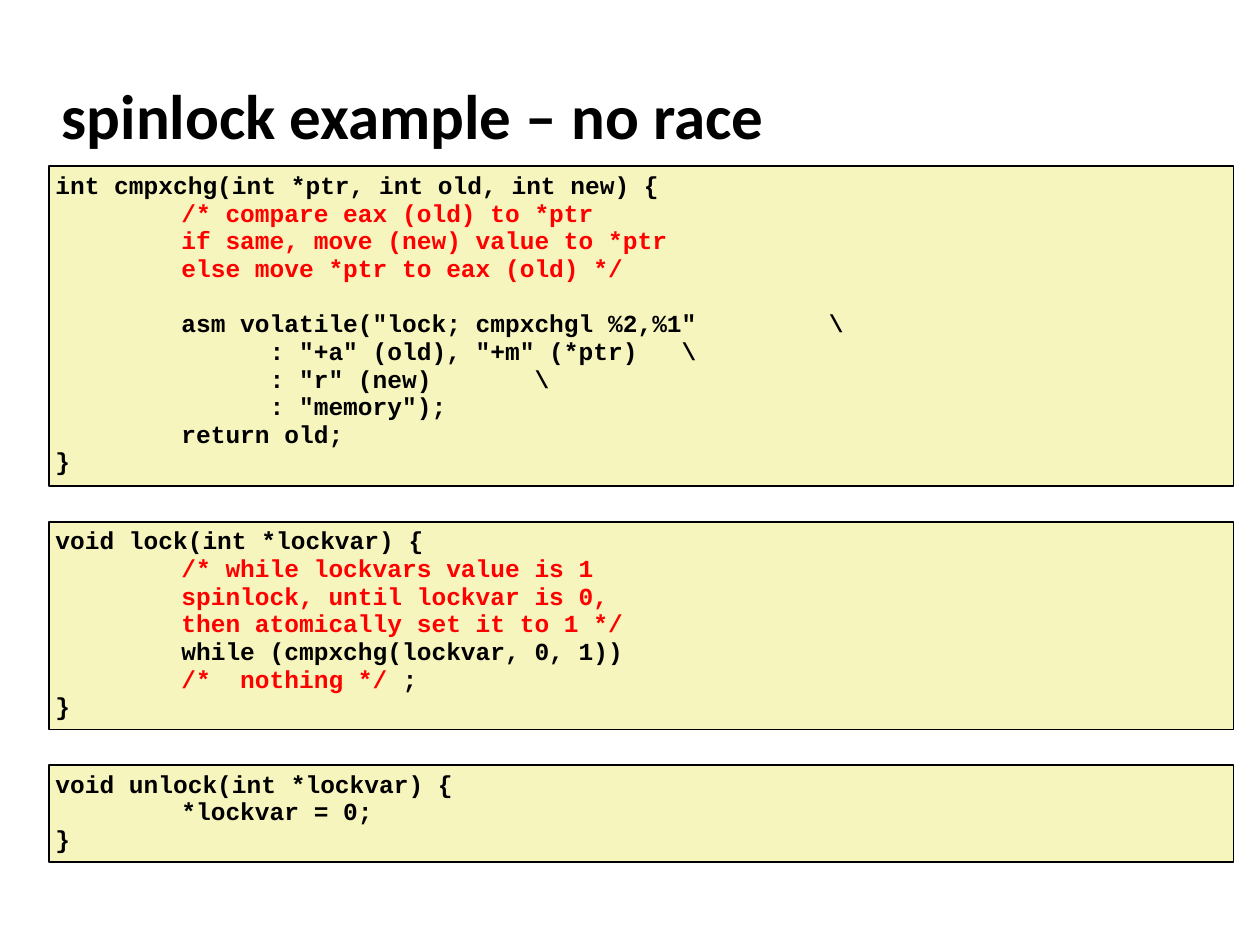
from dataclasses import dataclass

from lxml.etree import SubElement
from pptx import Presentation
from pptx.dml.color import RGBColor
from pptx.enum.shapes import MSO_SHAPE
from pptx.enum.text import MSO_ANCHOR as Anchor, MSO_AUTO_SIZE as AutoSize, PP_ALIGN as Align
from pptx.oxml.ns import qn
from pptx.util import Inches, Pt

COLORS = {"code": "000000", "comment": "FF0000", "box": "F6F5BD", "line": "000000"}
LEFT, WIDTH, INSET = 0.39, 9.4, 0.05
TAB_STOP = 1
LINE_SPACING = 0.94
LINE_HEIGHT = 15.8  # points, one line of code


@dataclass
class Line:
    text: str
    color: str = "code"
    tail: str = ""  # code that follows a comment
    gap: float = 0  # points above the line


@dataclass
class CodeBox:
    top: float
    height: float
    lines: list[Line]


def comment(text: str, tail: str = "") -> Line:
    return Line(text, "comment", tail)


BOXES = [
    CodeBox(1.32, 2.54, [
        Line("int cmpxchg(int *ptr, int old, int new) {"),
        comment("\t/* compare eax (old) to *ptr"),
        comment("\tif same, move (new) value to *ptr"),
        comment("\telse move *ptr to eax (old) */"),
        Line('\tasm volatile("lock; cmpxchgl %2,%1"         \\', gap=LINE_HEIGHT),
        Line('\t      : "+a" (old), "+m" (*ptr)   \\'),
        Line('\t      : "r" (new)       \\'),
        Line('\t      : "memory");'),
        Line("\treturn old;"),
        Line("}"),
    ]),
    CodeBox(4.14, 1.65, [
        Line("void lock(int *lockvar) {"),
        comment("\t/* while lockvars value is 1"),
        comment("\tspinlock, until lockvar is 0,"),
        comment("\tthen atomically set it to 1 */"),
        Line("\twhile (cmpxchg(lockvar, 0, 1))"),
        comment("\t/*  nothing */", tail=" ;"),
        Line("}"),
    ]),
    CodeBox(6.07, 0.77, [
        Line("void unlock(int *lockvar) {"),
        Line("\t*lockvar = 0;"),
        Line("}"),
    ]),
]


def rgb(name: str) -> RGBColor:
    return RGBColor.from_string(COLORS[name])


def add_text(p, text: str, *, size: float = 14, font: str = "Courier New",
             color: str = "code", bold: bool = True) -> None:
    r = p.add_run()
    r.text = text
    r.font.size = Pt(size)
    r.font.name = font
    r.font.bold = bold
    r.font.color.rgb = rgb(color)


def set_tab_stop(p, position: float) -> None:
    tabs = SubElement(p._p.get_or_add_pPr(), qn("a:tabLst"))
    SubElement(tabs, qn("a:tab"), pos=str(Inches(position)), algn="l")


def add_code_box(slide, box: CodeBox) -> None:
    sp = slide.shapes.add_shape(MSO_SHAPE.RECTANGLE, Inches(LEFT), Inches(box.top),
                                Inches(WIDTH), Inches(box.height))
    sp.shadow.inherit = False
    sp.fill.solid()
    sp.fill.fore_color.rgb = rgb("box")
    sp.line.color.rgb = rgb("line")
    sp.line.width = Pt(1)

    tf = sp.text_frame
    tf.word_wrap = True
    tf.auto_size = AutoSize.SHAPE_TO_FIT_TEXT
    tf.vertical_anchor = Anchor.TOP
    tf.margin_left = tf.margin_right = tf.margin_top = tf.margin_bottom = Inches(INSET)
    for i, line in enumerate(box.lines):
        p = tf.add_paragraph() if i else tf.paragraphs[0]
        p.alignment = Align.LEFT
        p.line_spacing = LINE_SPACING
        p.space_before = Pt(line.gap)
        set_tab_stop(p, TAB_STOP)
        add_text(p, line.text, color=line.color)
        if line.tail:
            add_text(p, line.tail)


def main() -> None:
    prs = Presentation()
    prs.slide_width, prs.slide_height = Inches(10), Inches(7.5)
    slide = prs.slides.add_slide(prs.slide_layouts[5])

    # Title
    title = slide.shapes.title
    title.left, title.top = Inches(LEFT), Inches(0.49)
    title.width, title.height = Inches(8.3), Inches(0.83)
    tf = title.text_frame
    tf.vertical_anchor = Anchor.MIDDLE
    p = tf.paragraphs[0]
    p.alignment = Align.LEFT
    add_text(p, "spinlock example – no race", size=36, font="Calibri")

    # Code listings
    for box in BOXES:
        add_code_box(slide, box)

    prs.save("out.pptx")


if __name__ == "__main__":
    main()
